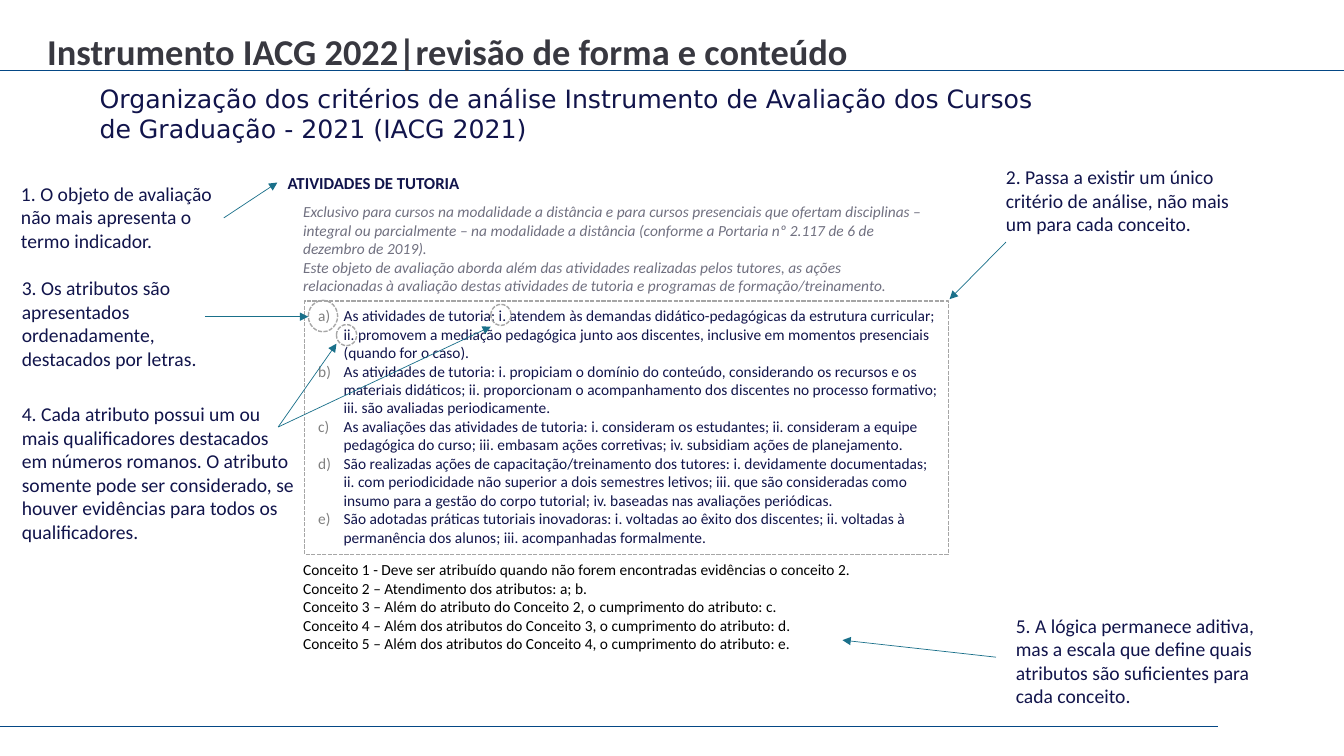
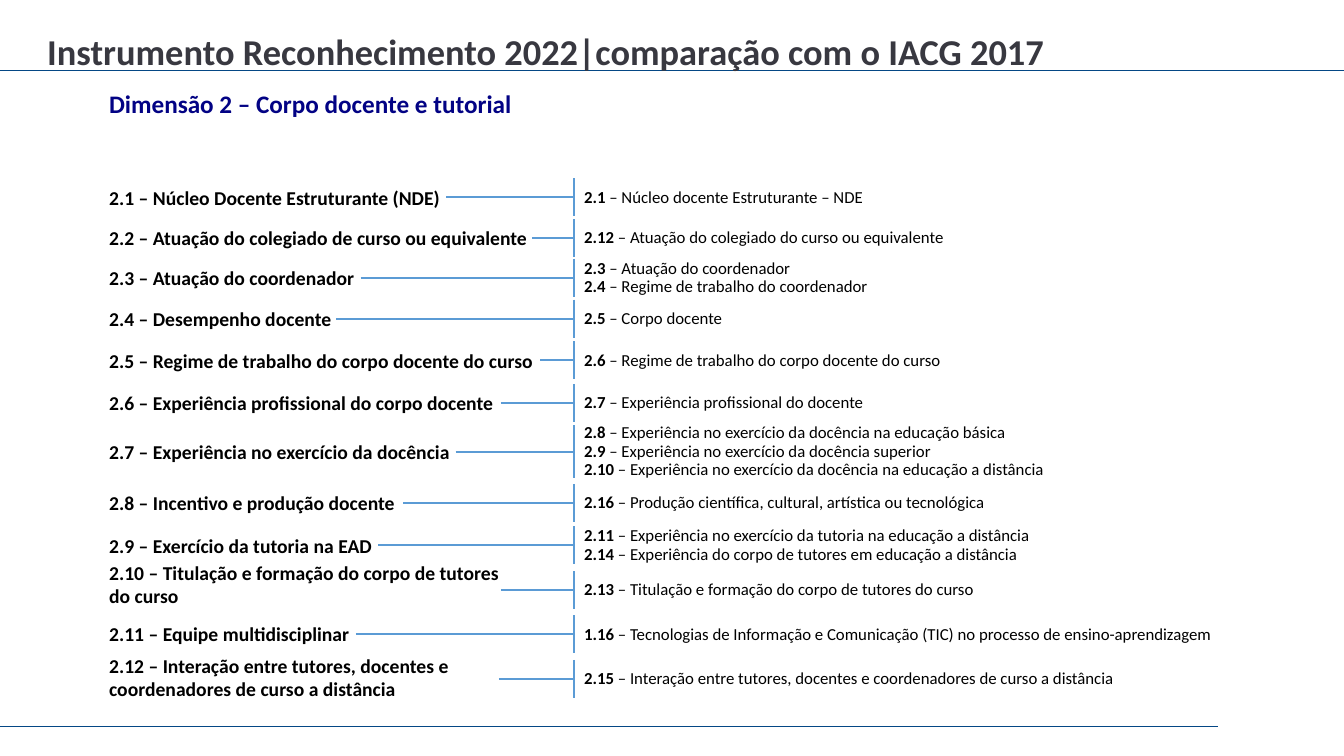
from dataclasses import dataclass
from typing import NamedTuple

from lxml.etree import SubElement
from pptx import Presentation
from pptx.dml.color import RGBColor
from pptx.enum.dml import MSO_LINE
from pptx.enum.shapes import MSO_CONNECTOR, MSO_SHAPE
from pptx.enum.text import MSO_ANCHOR, PP_ALIGN
from pptx.oxml.ns import qn
from pptx.util import Cm, Pt


@dataclass(frozen=True)
class Theme:
    font: str = "Calibri"
    subtitle_font: str = "DejaVu Sans"
    title: str = "383840"
    ink: str = "11144B"
    black: str = "000000"
    muted: str = "707080"
    letter: str = "808080"
    dashed: str = "A6A6A6"
    dimension: str = "020284"
    rule: str = "044785"
    arrow: str = "1A708A"
    bracket: str = "5B9BD5"
    title_size: float = 26
    subtitle_size: float = 18
    label_size: float = 14
    item_size: float = 12
    detail_size: float = 11


class Box(NamedTuple):
    """A region in centimetres."""
    x: float
    y: float
    w: float
    h: float

    def inner(self, dx, dy, w, h):
        return Box(self.x + dx, self.y + dy, w, h)

    def lengths(self):
        return [Cm(value) for value in self]


class Match(NamedTuple):
    """One indicator and the earlier indicators it corresponds to."""
    center: float
    line_start: float
    label: str
    earlier: list
    wrapped: bool = False
    rise: float = 0


THEME = Theme()
SLIDE_WIDTH, SLIDE_HEIGHT = 33.87, 19.05

INTRO = [
    "Exclusivo para cursos na modalidade a distância e para cursos presenciais que ofertam disciplinas – integral ou parcialmente – na modalidade a distância (conforme a Portaria nº 2.117 de 6 de dezembro de 2019).",
    "Este objeto de avaliação aborda além das atividades realizadas pelos tutores, as ações relacionadas à avaliação destas atividades de tutoria e programas de formação/treinamento.",
]
ATTRIBUTES = [
    "As atividades de tutoria: i. atendem às demandas didático-pedagógicas da estrutura curricular; ii. promovem a mediação pedagógica junto aos discentes, inclusive em momentos presenciais (quando for o caso).",
    "As atividades de tutoria: i. propiciam o domínio do conteúdo, considerando os recursos e os materiais didáticos; ii. proporcionam o acompanhamento dos discentes no processo formativo; iii. são avaliadas periodicamente.",
    "As avaliações das atividades de tutoria: i. consideram os estudantes; ii. consideram a equipe pedagógica do curso; iii. embasam ações corretivas; iv. subsidiam ações de planejamento.",
    "São realizadas ações de capacitação/treinamento dos tutores: i. devidamente documentadas; ii. com periodicidade não superior a dois semestres letivos; iii. que são consideradas como insumo para a gestão do corpo tutorial; iv. baseadas nas avaliações periódicas.",
    "São adotadas práticas tutoriais inovadoras: i. voltadas ao êxito dos discentes; ii. voltadas à permanência dos alunos; iii. acompanhadas formalmente.",
]
CONCEPTS = [
    "Conceito 1 - Deve ser atribuído quando não forem encontradas evidências o conceito 2.",
    "Conceito 2 – Atendimento dos atributos: a; b.",
    "Conceito 3 – Além do atributo do Conceito 2, o cumprimento do atributo: c.",
    "Conceito 4 – Além dos atributos do Conceito 3, o cumprimento do atributo: d.",
    "Conceito 5 – Além dos atributos do Conceito 4, o cumprimento do atributo: e.",
]
# Box, text, arrow start within the box, arrow targets on the slide
ANNOTATIONS = [
    (Box(0.28, 4.45, 5.36, 2.06),
     "1. O objeto de avaliação não mais apresenta o termo indicador.",
     (5.36, 1.04), [(6.99, 4.6)]),
    (Box(25.1, 4.04, 6.35, 2.06),
     "2. Passa a existir um único critério de análise, não mais um para cada conceito.",
     (0.25, 2.06), [(23.93, 7.54)]),
    (Box(0.3, 6.83, 6.07, 2.64),
     "3. Os atributos são apresentados ordenadamente, destacados por letras.",
     (4.86, 1.15), [(7.77, 7.98)]),
    (Box(0.3, 10.01, 7.39, 3.84),
     "4. Cada atributo possui um ou mais qualificadores destacados em números romanos. O atributo somente pode ser considerado, se houver evidências para todos os qualificadores.",
     (6.71, 0.75), [(12.37, 8.23), (8.48, 8.66)]),
    (Box(25.35, 15.34, 6.76, 2.64),
     "5. A lógica permanece aditiva, mas a escala que define quais atributos são suficientes para cada conceito.",
     (-0.25, 1.22), [(21.23, 16.13)]),
]
MATCHES = [
    Match(4.97, 11.25, "2.1 – Núcleo Docente Estruturante (NDE)",
          ["2.1 – Núcleo docente Estruturante – NDE"]),
    Match(6, 13.41, "2.2 – Atuação do colegiado de curso ou equivalente",
          ["2.12 – Atuação do colegiado do curso ou equivalente"]),
    Match(7, 9.09, "2.3 – Atuação do coordenador",
          ["2.3 – Atuação do coordenador",
           "2.4 – Regime de trabalho do coordenador"]),
    Match(8.03, 8.48, "2.4 – Desempenho docente", ["2.5 – Corpo docente"]),
    Match(9.08, 13.61, "2.5 – Regime de trabalho do corpo docente do curso",
          ["2.6 – Regime de trabalho do corpo docente do curso"]),
    Match(10.15, 12.62, "2.6 – Experiência profissional do corpo docente",
          ["2.7 – Experiência profissional do docente"]),
    Match(11.38, 11.48, "2.7 – Experiência no exercício da docência",
          ["2.8 – Experiência no exercício da docência na educação básica",
           "2.9 – Experiência no exercício da docência superior",
           "2.10 – Experiência no exercício da docência na educação a distância"]),
    Match(12.67, 10.16, "2.8 – Incentivo e produção docente",
          ["2.16 – Produção científica, cultural, artística ou tecnológica"]),
    Match(13.74, 9.53, "2.9 – Exercício da tutoria na EAD",
          ["2.11 – Experiência no exercício da tutoria na educação a distância",
           "2.14 – Experiência do corpo de tutores em educação a distância"]),
    Match(14.87, 12.62, "2.10 – Titulação e formação do corpo de tutores do curso",
          ["2.13 – Titulação e formação do corpo de tutores do curso"],
          wrapped=True, rise=0.15),
    Match(15.98, 8.97, "2.11 – Equipe multidisciplinar",
          ["1.16 – Tecnologias de Informação e Comunicação (TIC) no processo de ensino-aprendizagem"]),
    Match(17.11, 12.57,
          "2.12 – Interação entre tutores, docentes e coordenadores de curso a distância",
          ["2.15 – Interação entre tutores, docentes e coordenadores de curso a distância"],
          wrapped=True, rise=0.05),
]


def color(code):
    return RGBColor.from_string(code)


def letter_bullet(paragraph):
    properties = paragraph._p.get_or_add_pPr()
    properties.set("marL", str(Cm(0.64)))
    properties.set("indent", str(-Cm(0.64)))
    bullet_color = SubElement(properties, qn("a:buClr"))
    SubElement(bullet_color, qn("a:srgbClr"), val=THEME.letter)
    SubElement(properties, qn("a:buAutoNum"), type="alphaLcParenR")


def add_text(slide, box, paragraphs, *, size, ink=THEME.ink, font=THEME.font,
             bold=False, italic=False, anchor=MSO_ANCHOR.TOP, align=PP_ALIGN.LEFT,
             spacing=None, lettered=False, bold_number=False, holder=None,
             side_insets=(0.25, 0.25)):
    """Write paragraphs in a new text box, or in the holder shape if given."""
    holder = holder or slide.shapes.add_textbox(*box.lengths())
    frame = holder.text_frame
    frame.word_wrap = True
    frame.vertical_anchor = anchor
    frame.margin_left, frame.margin_right = map(Cm, side_insets)
    if isinstance(paragraphs, str):
        paragraphs = [paragraphs]
    for index, content in enumerate(paragraphs):
        paragraph = frame.add_paragraph() if index else frame.paragraphs[0]
        paragraph.alignment = align
        if spacing:
            paragraph.line_spacing = spacing
        if lettered:
            letter_bullet(paragraph)
        pieces = [(content, bold)]
        if bold_number:
            number, dash, name = content.partition(" – ")
            pieces = [(number, True), (dash + name, False)]
        for piece, is_bold in pieces:
            run = paragraph.add_run()
            run.text = piece
            run.font.name, run.font.size = font, Pt(size)
            run.font.bold, run.font.italic = is_bold, italic
            run.font.color.rgb = color(ink)
    return holder


def add_line(slide, start, end, ink, width=0.5, arrow=False):
    line = slide.shapes.add_connector(
        MSO_CONNECTOR.STRAIGHT, *(Cm(value) for value in (*start, *end)))
    line.line.color.rgb = color(ink)
    line.line.width = Pt(width)
    if arrow:
        SubElement(line.line._get_or_add_ln(), qn("a:tailEnd"), type="triangle")
    SubElement(line._element.spPr, qn("a:effectLst"))


def add_dashed(slide, kind, box):
    outline = slide.shapes.add_shape(kind, *box.lengths())
    outline.shadow.inherit = False
    outline.fill.background()
    outline.line.color.rgb = color(THEME.dashed)
    outline.line.width = Pt(1)
    outline.line.dash_style = MSO_LINE.SQUARE_DOT
    return outline


def new_slide(deck, title):
    """Blank slide with the shared title and rules."""
    slide = deck.slides.add_slide(deck.slide_layouts[6])
    for y, right in ((18.31, 30.7), (1.78, SLIDE_WIDTH)):
        add_line(slide, (0, y), (right, y), THEME.rule)
    add_text(slide, Box(0.94, 0.74, 26.3, 0.91), title, size=THEME.title_size,
             ink=THEME.title, bold=True, spacing=0.9)
    return slide


def tutoring_panel(slide, box):
    # Heading and scope
    add_text(slide, box.inner(0, 0, 4.9, 0.76), "ATIVIDADES DE TUTORIA",
             size=THEME.item_size, bold=True)
    add_text(slide, box.inner(0.39, 0.76, 16.15, 2.62), INTRO,
             size=THEME.detail_size, ink=THEME.muted, italic=True)
    # Lettered attributes
    attributes = box.inner(0.67, 3.37, 16.23, 6.38)
    add_text(slide, attributes, ATTRIBUTES, size=THEME.detail_size, lettered=True,
             holder=add_dashed(slide, MSO_SHAPE.RECTANGLE, attributes),
             side_insets=(0.35, 0.23))
    # Scale of concepts
    add_text(slide, box.inner(0.39, 9.78, 17.07, 2.62), CONCEPTS,
             size=THEME.detail_size, ink=THEME.black)
    # Circles around the letter and the roman numerals
    for circle in ((0.77, 3.35, 0.74, 0.79), (5.37, 3.45, 0.51, 0.53),
                   (1.48, 3.96, 0.51, 0.53)):
        add_dashed(slide, MSO_SHAPE.OVAL, box.inner(*circle))


def annotation(slide, box, note, start, targets):
    add_text(slide, box, note, size=THEME.label_size)
    for target in targets:
        add_line(slide, (box.x + start[0], box.y + start[1]), target,
                 THEME.arrow, arrow=True)


def match_row(slide, box, match):
    """Label on the left, bracket, and earlier indicators on the right."""
    middle = box.y + box.h / 2
    bracket_x = box.x + 11.97
    label_width = 10.77 if match.wrapped else 11.86
    add_text(slide, box.inner(0, -match.rise, label_width, box.h), match.label,
             size=THEME.label_size, ink=THEME.black, bold=True,
             anchor=MSO_ANCHOR.MIDDLE)
    reach = 0.66 if len(match.earlier) > 2 else 0.48
    add_line(slide, (bracket_x, middle - reach), (bracket_x, middle + reach),
             THEME.bracket, 1.5)
    add_line(slide, (match.line_start, middle), (bracket_x, middle),
             THEME.bracket, 1.5)
    add_text(slide, box.inner(11.97, 0, box.w - 11.97, box.h), match.earlier,
             size=THEME.item_size, ink=THEME.black, bold_number=True,
             anchor=MSO_ANCHOR.MIDDLE, spacing=Pt(13.2))


def review_slide(deck):
    slide = new_slide(deck, "Instrumento IACG 2022|revisão de forma e conteúdo")
    add_text(slide, Box(2.26, 1.98, 25, 1.8),
             "Organização dos critérios de análise Instrumento de Avaliação dos Cursos de Graduação - 2021 (IACG 2021)",
             size=THEME.subtitle_size, font=THEME.subtitle_font)
    tutoring_panel(slide, Box(7, 4.22, 17.46, 12.4))
    for note in ANNOTATIONS:
        annotation(slide, *note)


def comparison_slide(deck):
    slide = new_slide(deck, "Instrumento Reconhecimento 2022|comparação com o IACG 2017")
    add_text(slide, Box(2.5, 2.11, 12, 1.02), "Dimensão 2 – Corpo docente e tutorial",
             size=THEME.subtitle_size, ink=THEME.dimension, bold=True)
    row_height = 1.44
    for match in MATCHES:
        match_row(slide, Box(2.5, match.center - row_height / 2, 29.5, row_height), match)


def main():
    deck = Presentation()
    deck.slide_width, deck.slide_height = Cm(SLIDE_WIDTH), Cm(SLIDE_HEIGHT)
    review_slide(deck)
    comparison_slide(deck)
    deck.save("out.pptx")


if __name__ == "__main__":
    main()
